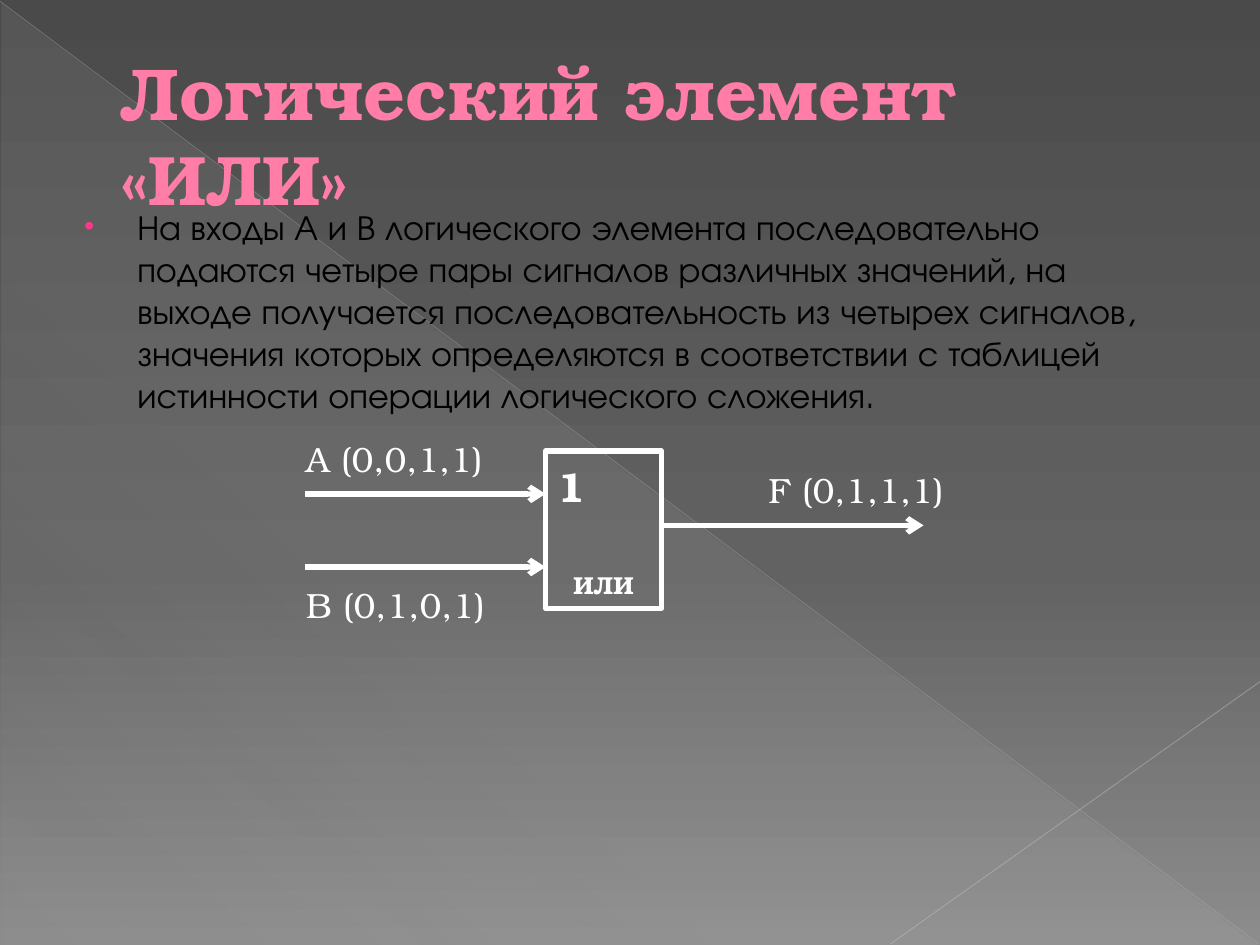
from lxml.etree import SubElement
from pptx import Presentation
from pptx.dml.color import RGBColor
from pptx.enum.shapes import MSO_CONNECTOR, MSO_SHAPE
from pptx.enum.text import MSO_ANCHOR, MSO_AUTO_SIZE, PP_ALIGN
from pptx.oxml.ns import qn
from pptx.util import Inches, Pt

SERIF, SANS = "TeX Gyre Bonum", "TeX Gyre Adventor"
WHITE = RGBColor(0xFF, 0xFF, 0xFF)
BLACK = RGBColor(0, 0, 0)
PINK = RGBColor(0xFF, 0x7D, 0xA7)
ROSE = RGBColor(0xB1, 0x27, 0x61)
MARK = RGBColor(0xFF, 0x38, 0x8C)
PALE = RGBColor(0xD2, 0xD2, 0xD2)
EDGE = RGBColor(0xBF, 0xBF, 0xBF)
FAINT = RGBColor(0xC6, 0xC6, 0xC6)
TOP = RGBColor(0x4A, 0x4A, 0x4A)
MID = RGBColor(0x62, 0x62, 0x62)
LOW = RGBColor(0x8C, 0x8C, 0x8C)


def node(root, tag, **attrs):
    return SubElement(root, qn(tag), attrs)


def set_alpha(color, part):
    node(color, "a:alpha", val=str(part * 1000))


def set_grad(fill, root, angle, stops):
    """Fill with stops of (position, colour, opacity in percent)."""
    fill.gradient()
    fill.gradient_angle = angle
    items = root.find(".//" + qn("a:gsLst"))
    for old in list(items):
        items.remove(old)
    for pos, color, part in stops:
        stop = node(items, "a:gs", pos=str(pos * 1000))
        tint = node(stop, "a:srgbClr", val=str(color))
        if part < 100:
            set_alpha(tint, part)


def add_run(para, text, size, color, font=SERIF, bold=False):
    run = para.add_run()
    run.text = text
    run.font.name, run.font.size, run.font.bold = font, Pt(size), bold
    run.font.color.rgb = color
    return run


def add_line(shapes, start, end, color, width, part=100, arrow=False):
    line = shapes.add_connector(MSO_CONNECTOR.STRAIGHT,
                                *(Inches(v) for v in start + end))
    line.line.color.rgb = color
    line.line.width = Pt(width)
    props = line._element.spPr
    if part < 100:
        set_alpha(props.find(".//" + qn("a:srgbClr")), part)
    if arrow:
        node(props.find(qn("a:ln")), "a:tailEnd", type="arrow")
    node(props, "a:effectLst")


def place(shape, box):
    shape.left, shape.top, shape.width, shape.height = (Inches(v) for v in box)


def draw_back(slide):
    fill = slide.background.fill
    set_grad(fill, slide.element, 270,
             [(0, TOP, 100), (60, MID, 100), (100, LOW, 100)])
    # Corner triangle and thin diagonals
    tri = slide.shapes.add_shape(MSO_SHAPE.RIGHT_TRIANGLE, Inches(0.01),
                                 Inches(0.02), Inches(9.98), Inches(7.48))
    tri.shadow.inherit = False
    tri.line.fill.background()
    set_grad(tri.fill, tri._element.spPr, 227,
             [(0, PALE, 10), (70, PALE, 8), (100, PALE, 1)])
    add_line(slide.shapes, (0, 0.01), (9.99, 7.49), EDGE, 0.39, 35)
    add_line(slide.shapes, (10, 5.41), (7.07, 7.49), FAINT, 0.47, 45)


def fill_title(title, box):
    place(title, box)
    frame = title.text_frame
    frame.vertical_anchor = MSO_ANCHOR.MIDDLE
    frame.auto_size = MSO_AUTO_SIZE.NONE
    para = frame.paragraphs[0]
    para.alignment = PP_ALIGN.LEFT
    para._p.get_or_add_pPr().set("marL", str(Inches(0.53)))
    for text, size in (("Логический элемент ", 42), ("«ИЛИ»", 40)):
        run = add_run(para, text, size, PINK, bold=True)
        # Thin outline goes ahead of the text fill
        props = run._r.get_or_add_rPr()
        line = node(props, "a:ln", w=str(Pt(0.5)))
        node(node(line, "a:solidFill"), "a:srgbClr", val=str(ROSE))
        props.insert(0, line)


def fill_body(body, box):
    place(body, box)
    body.text_frame.auto_size = MSO_AUTO_SIZE.NONE
    para = body.text_frame.paragraphs[0]
    props = para._p.get_or_add_pPr()
    props.set("marL", str(Inches(0.49)))
    props.set("indent", str(Inches(-0.42)))
    # Pink bullet
    node(node(props, "a:buClr"), "a:srgbClr", val=str(MARK))
    node(props, "a:buSzPct", val="80000")
    node(props, "a:buFont", typeface="Arial")
    node(props, "a:buChar", char="•")
    add_run(para, "На входы А и В логического элемента последовательно "
            "подаются четыре пары сигналов различных значений, на выходе "
            "получается последовательность из четырех сигналов, значения "
            "которых определяются в соответствии с таблицей истинности "
            "операции логического сложения.", 20, BLACK, SANS)


def draw_gate(shapes, box):
    left, top, width, height = box
    gate = shapes.add_shape(MSO_SHAPE.RECTANGLE, *(Inches(v) for v in box))
    gate.shadow.inherit = False
    gate.fill.background()
    gate.line.color.rgb = WHITE
    gate.line.width = Pt(3)
    frame = gate.text_frame
    frame.word_wrap = True
    frame.vertical_anchor = MSO_ANCHOR.MIDDLE
    sign = frame.paragraphs[0]
    sign.alignment = PP_ALIGN.LEFT
    add_run(sign, "1", 24, WHITE, bold=True)
    name = frame.add_paragraph()
    name.alignment = PP_ALIGN.CENTER
    name.space_before = Pt(34)
    add_run(name, "ИЛИ", 14, WHITE, bold=True)

    # Two inputs and one output
    right = left + width
    for x, end, drop in ((left - 1.91, left, 0.34), (left - 1.91, left, 0.92),
                         (right, right + 2.08, 0.59)):
        add_line(shapes, (x, top + drop), (end, top + drop), WHITE, 3,
                 arrow=True)

    # Signal labels
    for text, x, y in (("А (0,0,1,1)", left - 2, top - 0.16),
                       ("В (0,1,0,1)", left - 2, top + 1),
                       ("F (0,1,1,1)", right + 0.75, top + 0.09)):
        label = shapes.add_textbox(Inches(x), Inches(y),
                                   Inches(1.92), Inches(0.44))
        label.text_frame.word_wrap = True
        label.text_frame.auto_size = MSO_AUTO_SIZE.SHAPE_TO_FIT_TEXT
        add_run(label.text_frame.paragraphs[0], text, 20, WHITE)


def main():
    deck = Presentation()
    deck.slide_width, deck.slide_height = Inches(10), Inches(7.5)
    slide = deck.slides.add_slide(deck.slide_layouts[1])
    draw_back(slide)
    title, body = slide.placeholders
    fill_title(title, (0.33, 0.29, 9.33, 1.53))
    fill_body(body, (0.5, 1.58, 9, 1.92))
    # Text goes in front of the backdrop
    for shape in (title, body):
        slide.shapes._spTree.append(shape._element)
    group = slide.shapes.add_group_shape()
    draw_gate(group.shapes, (4.33, 3.58, 0.92, 1.25))
    deck.save("out.pptx")


if __name__ == "__main__":
    main()
